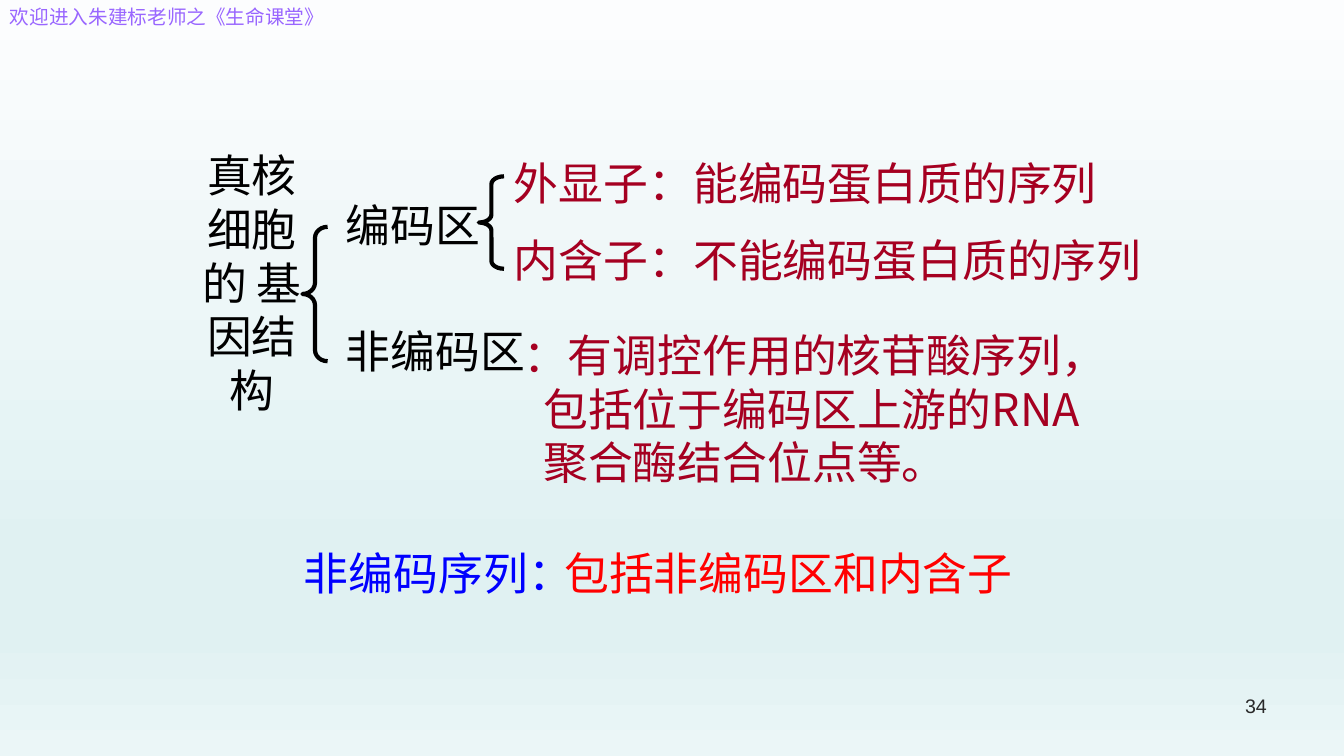
from copy import deepcopy
from pptx import Presentation
from pptx.dml.color import RGBColor
from pptx.enum.shapes import MSO_SHAPE
from pptx.enum.text import PP_ALIGN
from pptx.oxml.ns import qn
from pptx.util import Inches, Pt

LEFT_BRACE = MSO_SHAPE.LEFT_BRACE
LEFT, CENTER, RIGHT = PP_ALIGN.LEFT, PP_ALIGN.CENTER, PP_ALIGN.RIGHT
BLACK = RGBColor(0x00, 0x00, 0x00)
CRIMSON = RGBColor(0xA5, 0x00, 0x21)
BLUE = RGBColor(0x00, 0x00, 0xFF)
RED = RGBColor(0xFF, 0x00, 0x00)
VIOLET = RGBColor(0x99, 0x66, 0xFF)
CHARCOAL = RGBColor(0x29, 0x29, 0x29)
BACKGROUND_STOPS = [
    (0, RGBColor(0xFC, 0xFD, 0xFE)),
    (0.74, RGBColor(0xE0, 0xF1, 0xF2)),
    (0.83, RGBColor(0xE0, 0xF1, 0xF2)),
    (1, RGBColor(0xEB, 0xF6, 0xF7)),
]
CJK_FONT, LATIN_FONT = "Noto Sans CJK SC", "Arial"
BODY_SIZE, SMALL_SIZE = 32, 14
COLUMNS, ROWS = 160, 90
SLIDE_WIDTH, SLIDE_HEIGHT = Inches(13.33), Inches(7.5)
LINE_ROWS = 7.7


def grid_box(left, top, width, height):
    """Turn columns and rows of the slide grid into lengths."""
    column, row = SLIDE_WIDTH / COLUMNS, SLIDE_HEIGHT / ROWS
    return [round(n) for n in (left * column, top * row, width * column, height * row)]


def add_text(slide, box, lines, color, size=BODY_SIZE, font=CJK_FONT,
             align=LEFT, space_before=0, hanging_columns=0):
    """Add a text box with one paragraph per line; later lines may be indented."""
    frame = slide.shapes.add_textbox(*grid_box(*box)).text_frame
    frame.word_wrap = True
    for index, line in enumerate(lines):
        paragraph = frame.add_paragraph() if index else frame.paragraphs[0]
        paragraph.alignment = align
        if index:
            paragraph.space_before = Pt(space_before)
            indent = grid_box(hanging_columns, 0, 0, 0)[0]
            paragraph._p.get_or_add_pPr().set("marL", str(indent))
        run = paragraph.add_run()
        run.text = line
        run.font.size, run.font.name = Pt(size), font
        run.font.color.rgb = color
        east_asian = run._r.get_or_add_rPr().makeelement(qn("a:ea"), {"typeface": CJK_FONT})
        run.font._element.append(east_asian)


def add_brace(slide, box, curl):
    """Add a black left brace."""
    brace = slide.shapes.add_shape(LEFT_BRACE, *grid_box(*box))
    brace.shadow.inherit = False
    brace.fill.background()
    brace.line.color.rgb = BLACK
    brace.line.width = Pt(3)
    brace.adjustments[0], brace.adjustments[1] = curl, 0.5


def paint_background(slide):
    """Fill the background with a vertical gradient."""
    fill = slide.background.fill
    fill.gradient()
    fill.gradient_angle = 270
    stop_list = slide.element.find(".//" + qn("a:gsLst"))
    while len(stop_list) < len(BACKGROUND_STOPS):
        stop_list.append(deepcopy(stop_list[0]))
    for stop, (position, color) in zip(fill.gradient_stops, BACKGROUND_STOPS):
        stop.position, stop.color.rgb = position, color


def add_page_frame(slide):
    """Add the greeting at the top and the page number at the bottom."""
    add_text(slide, (0, 0, 63.5, 4), ["欢迎进入朱建标老师之《生命课堂》"],
             VIOLET, SMALL_SIZE, LATIN_FONT)
    add_text(slide, (114.7, 82, 37.3, 6.2), ["34"], CHARCOAL, SMALL_SIZE, LATIN_FONT, RIGHT)


def add_gene_tree(slide, left, top):
    """Add the braced breakdown of the gene structure."""
    add_text(slide, (left, top, 16, 33.5), ["真核细胞的 基因结构"], BLACK, align=CENTER)
    add_brace(slide, (left + 14, top + 10, 3, 16), 0.44)
    for label, offset, width in (("编码区", 6, 27), ("非编码区", 21, 29)):
        add_text(slide, (left + 18, top + offset, width, LINE_ROWS), [label], BLACK)
    add_brace(slide, (left + 35, top + 4, 3, 11), 0.31)
    add_text(slide, (left + 38, top + 1, 80, 17.4),
             ["外显子：能编码蛋白质的序列", "内含子：不能编码蛋白质的序列"],
             CRIMSON, space_before=BODY_SIZE / 2)
    add_text(slide, (left + 39.1, top + 21.4, 73, 20.6),
             ["：有调控作用的核苷酸序列，", "包括位于编码区上游的RNA", "聚合酶结合位点等。"],
             CRIMSON, hanging_columns=2.4)


def add_summary(slide, left, top):
    """Add the closing definition of non-coding sequences."""
    add_text(slide, (left, top, 41.1, LINE_ROWS), ["非编码序列："], BLUE)
    add_text(slide, (left + 31, top, 57, LINE_ROWS), ["包括非编码区和内含子"], RED)


def main():
    """Build and save the slide."""
    presentation = Presentation()
    presentation.slide_width, presentation.slide_height = SLIDE_WIDTH, SLIDE_HEIGHT
    slide = presentation.slides.add_slide(presentation.slide_layouts[6])
    paint_background(slide)
    add_page_frame(slide)
    add_gene_tree(slide, 22, 17)
    add_summary(slide, 35, 64.4)
    presentation.save("out.pptx")


if __name__ == "__main__":
    main()
